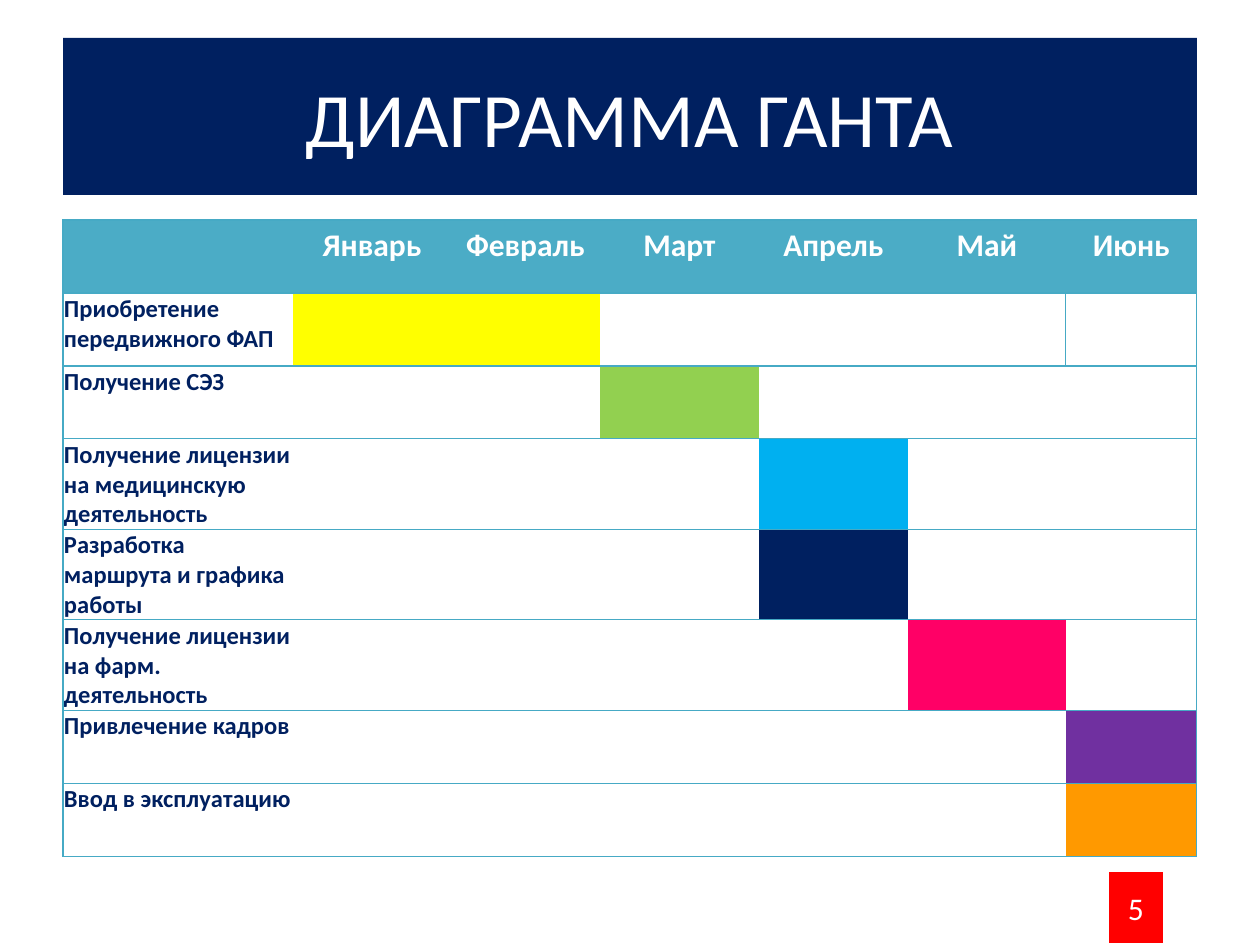
from lxml import etree
from pptx import Presentation
from pptx.dml.color import RGBColor
from pptx.enum.shapes import MSO_SHAPE
from pptx.enum.text import MSO_ANCHOR, PP_ALIGN
from pptx.oxml.ns import qn
from pptx.util import Emu, Pt

PX = 914400 // 126
NAVY, WHITE, TEAL, HEADER, RED = "002060", "FFFFFF", "46AAC5", "4BACC6", "FF0000"
NO_STYLE = "{2D5ABB26-0587-4C30-8999-92F81FD0307C}"

TITLE = "ДИАГРАММА ГАНТА"
PAGE = "5"
MONTHS = ["Январь", "Февраль", "Март", "Апрель", "Май", "Июнь"]
# task, first month, last month, bar colour
TASKS = [
    ("Приобретение передвижного ФАП", 1, 2, "FFFF00"),
    ("Получение СЭЗ", 3, 3, "92D050"),
    ("Получение лицензии на медицинскую деятельность", 4, 4, "00B0F0"),
    ("Разработка маршрута и графика работы", 4, 4, NAVY),
    ("Получение лицензии на фарм. деятельность", 5, 5, "FF0066"),
    ("Привлечение кадров", 6, 6, "7030A0"),
    ("Ввод в эксплуатацию", 6, 6, "FF9900"),
]
COL_WIDTHS = [230, 158, 149, 159, 149, 158, 131]
ROW_HEIGHTS = [73, 73, 73, 88, 88, 88, 73, 73]


def px(n):
    return Emu(n * PX)


def rgb(color):
    return RGBColor.from_string(color)


def fill(obj, color):
    obj.fill.solid()
    obj.fill.fore_color.rgb = rgb(color)


def write(tf, text, size, color, bold=False, align=PP_ALIGN.CENTER):
    tf.text = text
    p = tf.paragraphs[0]
    p.alignment = align
    font = p.runs[0].font
    font.name, font.size, font.bold = "Calibri", Pt(size), bold
    font.color.rgb = rgb(color)


def add_borders(cell, sides):
    """Draw thin teal lines on the sides, given as letters in the order LRTB."""
    tcPr = cell._tc.get_or_add_tcPr()
    for side in sides:
        ln = etree.SubElement(tcPr, qn(f"a:ln{side}"), w=str(Pt(0.75)))
        solid = etree.SubElement(ln, qn("a:solidFill"))
        etree.SubElement(solid, qn("a:srgbClr"), val=TEAL)


def add_title(slide):
    title = slide.shapes.title
    title.left, title.top, title.width, title.height = px(63), px(38), px(1134), px(157)
    fill(title, NAVY)
    write(title.text_frame, TITLE, 44, WHITE)
    title.text_frame.vertical_anchor = MSO_ANCHOR.MIDDLE


def add_page_number(slide):
    sp = slide.shapes.add_shape(MSO_SHAPE.RECTANGLE, px(1107), px(870), px(58), px(75))
    sp.shadow.inherit = False
    fill(sp, RED)
    sp.line.color.rgb = rgb(WHITE)
    sp.line.width = Pt(2)
    write(sp.text_frame, PAGE, 18, WHITE)
    sp.text_frame.vertical_anchor = MSO_ANCHOR.MIDDLE


def add_gantt(slide):
    frame = slide.shapes.add_table(len(ROW_HEIGHTS), len(COL_WIDTHS), px(63), px(220),
                                   px(sum(COL_WIDTHS)), px(sum(ROW_HEIGHTS)))
    table = frame.table
    table.horz_banding = False
    table._tbl.tblPr.find(qn("a:tableStyleId")).text = NO_STYLE
    for col, width in zip(table.columns, COL_WIDTHS):
        col.width = px(width)
    for row, height in zip(table.rows, ROW_HEIGHTS):
        row.height = px(height)

    last = len(MONTHS)
    for r in range(len(ROW_HEIGHTS)):
        for c in range(last + 1):
            # The first task also has a line between May and June.
            left = "L" if c == 0 or (r, c) == (1, last) else ""
            right = "R" if c == last or (r, c) == (1, last - 1) else ""
            add_borders(table.cell(r, c), left + right + "TB")

    for c, month in enumerate([""] + MONTHS):
        cell = table.cell(0, c)
        fill(cell, HEADER)
        if month:
            write(cell.text_frame, month, 18, WHITE, bold=True)

    for r, (task, first, final, color) in enumerate(TASKS, 1):
        cell = table.cell(r, 0)
        cell.margin_left = cell.margin_right = cell.margin_top = px(1)
        cell.margin_bottom = 0
        write(cell.text_frame, task, 14, NAVY, bold=True, align=PP_ALIGN.LEFT)
        bar = table.cell(r, first)
        if final > first:
            bar.merge(table.cell(r, final))
        fill(bar, color)


def main():
    prs = Presentation()
    prs.slide_width, prs.slide_height = px(1260), px(945)
    slide = prs.slides.add_slide(prs.slide_layouts[5])
    add_title(slide)
    add_page_number(slide)
    add_gantt(slide)
    prs.save("out.pptx")


if __name__ == "__main__":
    main()
